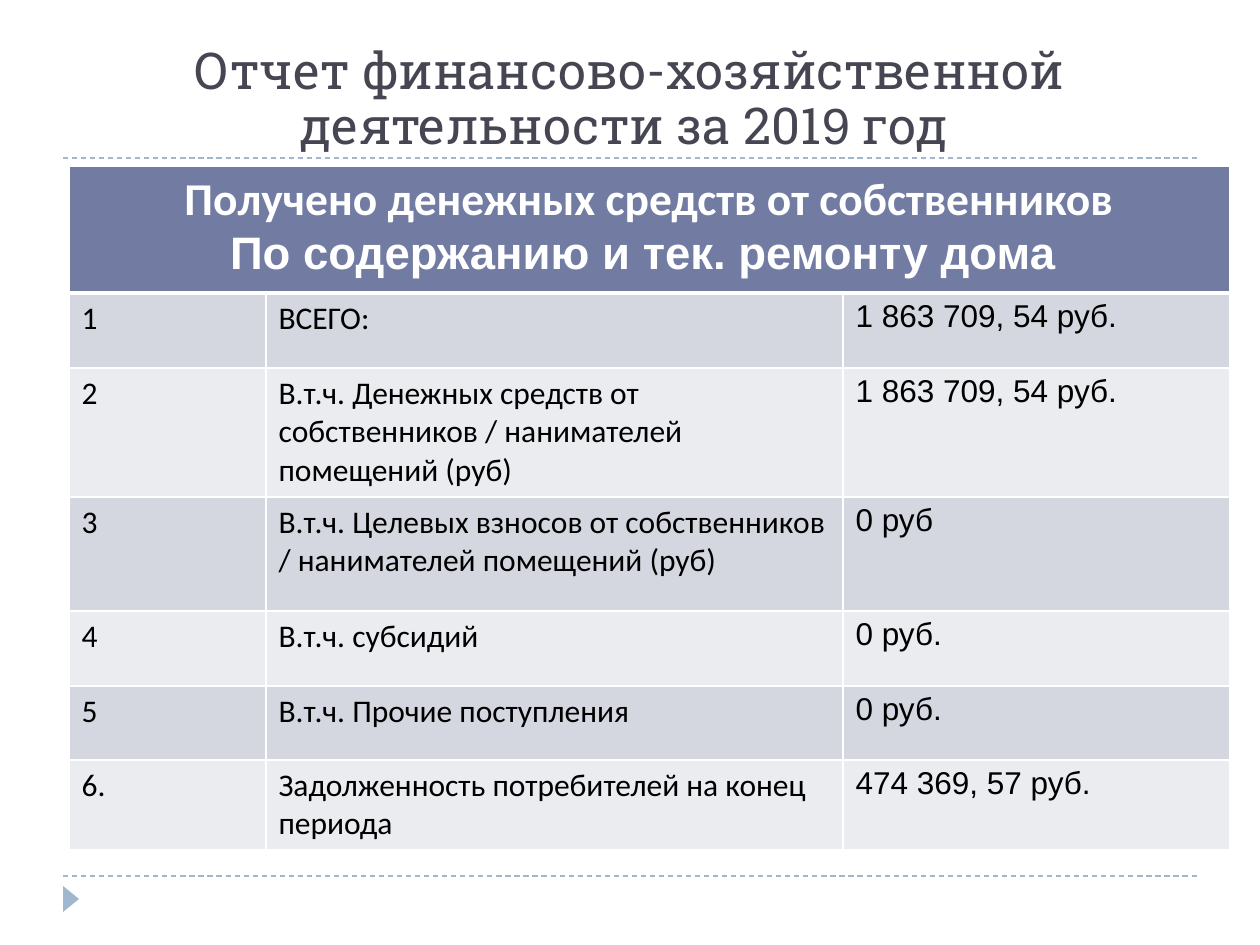
from lxml import etree
from pptx import Presentation
from pptx import util as u
from pptx.dml.color import RGBColor
from pptx.enum import dml, shapes, text
from pptx.oxml.ns import qn

TITLE = [
    ("Отчет финансово-хозяйственной деятельности за 201", "Roboto Slab"),
    ("9", "Arial"),
    (" год ", "Roboto Slab"),
]
HEADINGS = [
    ("Получено денежных средств от собственников", "Calibri"),
    ("По содержанию и тек. ремонту дома ", "Arial"),
]
ROWS = [
    ("1", "ВСЕГО:", "1 863 709, 54 руб."),
    ("2", "В.т.ч. Денежных средств от собственников / нанимателей помещений (руб)",
     "1 863 709, 54 руб."),
    ("3", "В.т.ч. Целевых взносов от собственников / нанимателей помещений (руб)", "0 руб"),
    ("4", "В.т.ч. субсидий", "0 руб."),
    ("5", "В.т.ч. Прочие поступления", "0 руб."),
    ("6.", "Задолженность потребителей на конец периода", "474 369, 57 руб."),
]
COLUMN_FONTS = ("Calibri", "Calibri", "Arial")
COLUMN_WIDTHS = (197, 577, 387)
ROW_HEIGHTS = (127, 75, 129, 114, 75, 74, 89)
BANDS = ("D5D7E0", "EBECF0")
RULE_TOPS = (876, 158)
ACCENT = "9FB8CD"
WHITE = "FFFFFF"


def px(length):
    return u.Emu(round(length * 914400 / 126))


def color(value):
    return RGBColor.from_string(value)


def write(para, words, font="Calibri", size=18, ink="000000", bold=False, align=None):
    span = para.add_run()
    span.text = words
    span.font.name = font
    span.font.size = u.Pt(size)
    span.font.bold = bold
    span.font.color.rgb = color(ink)
    para.alignment = align


def style_cell(cell, fill, top=1, bottom=1):
    properties = cell._tc.get_or_add_tcPr()
    for side, width in (("L", 1), ("R", 1), ("T", top), ("B", bottom)):
        line = etree.SubElement(properties, qn(f"a:ln{side}"), w=str(u.Pt(width)))
        paint = etree.SubElement(line, qn("a:solidFill"))
        etree.SubElement(paint, qn("a:srgbClr"), val=WHITE)
    cell.fill.solid()
    cell.fill.fore_color.rgb = color(fill)


def add_rule(page, top):
    rule = page.shapes.add_connector(
        shapes.MSO_CONNECTOR.STRAIGHT, px(63), px(top), px(1197), px(top))
    rule.line.color.rgb = color(ACCENT)
    rule.line.width = u.Pt(0.75)
    rule.line.dash_style = dml.MSO_LINE.DASH
    etree.SubElement(rule._element.spPr, qn("a:effectLst"))


def add_marker(page):
    marker = page.shapes.add_shape(
        shapes.MSO_SHAPE.ISOSCELES_TRIANGLE, px(58), px(891), px(26), px(16))
    marker.rotation = 90
    marker.shadow.inherit = False
    marker.fill.solid()
    marker.fill.fore_color.rgb = color(ACCENT)
    marker.line.fill.background()


def fill_title(page):
    title = page.shapes.title
    title.left, title.top, title.width, title.height = map(px, (63, 32, 1134, 126))
    frame = title.text_frame
    frame.word_wrap = True
    frame.auto_size = text.MSO_AUTO_SIZE.NONE
    frame.vertical_anchor = text.MSO_ANCHOR.BOTTOM
    frame.margin_bottom = px(3)
    para = frame.paragraphs[0]
    para.line_spacing = 0.9
    for words, font in TITLE:
        write(para, words, font=font, size=29, ink="464653", align=text.PP_ALIGN.CENTER)


def add_report(page):
    table = page.shapes.add_table(
        len(ROW_HEIGHTS), len(COLUMN_WIDTHS), px(69), px(166),
        px(sum(COLUMN_WIDTHS)), px(sum(ROW_HEIGHTS))).table
    for column, width in zip(table.columns, COLUMN_WIDTHS):
        column.width = px(width)
    for row, height in zip(table.rows, ROW_HEIGHTS):
        row.height = px(height)

    for cell in table.rows[0].cells:
        style_cell(cell, "727CA3", bottom=3)
    heading = table.cell(0, 0)
    heading.merge(table.cell(0, len(COLUMN_WIDTHS) - 1))
    frame = heading.text_frame
    for index, (words, font) in enumerate(HEADINGS):
        para = frame.add_paragraph() if index else frame.paragraphs[0]
        write(para, words, font=font, size=26, ink=WHITE, bold=True,
              align=text.PP_ALIGN.CENTER)

    for index, entries in enumerate(ROWS):
        for cell, words, font in zip(table.rows[index + 1].cells, entries, COLUMN_FONTS):
            style_cell(cell, BANDS[index % 2], top=1 if index else 3)
            write(cell.text_frame.paragraphs[0], words, font=font)


def main():
    deck = Presentation()
    deck.slide_width, deck.slide_height = px(1260), px(945)
    page = deck.slides.add_slide(deck.slide_layouts[5])
    for top in RULE_TOPS:
        add_rule(page, top)
    add_marker(page)
    fill_title(page)
    add_report(page)
    deck.save("out.pptx")


if __name__ == "__main__":
    main()
